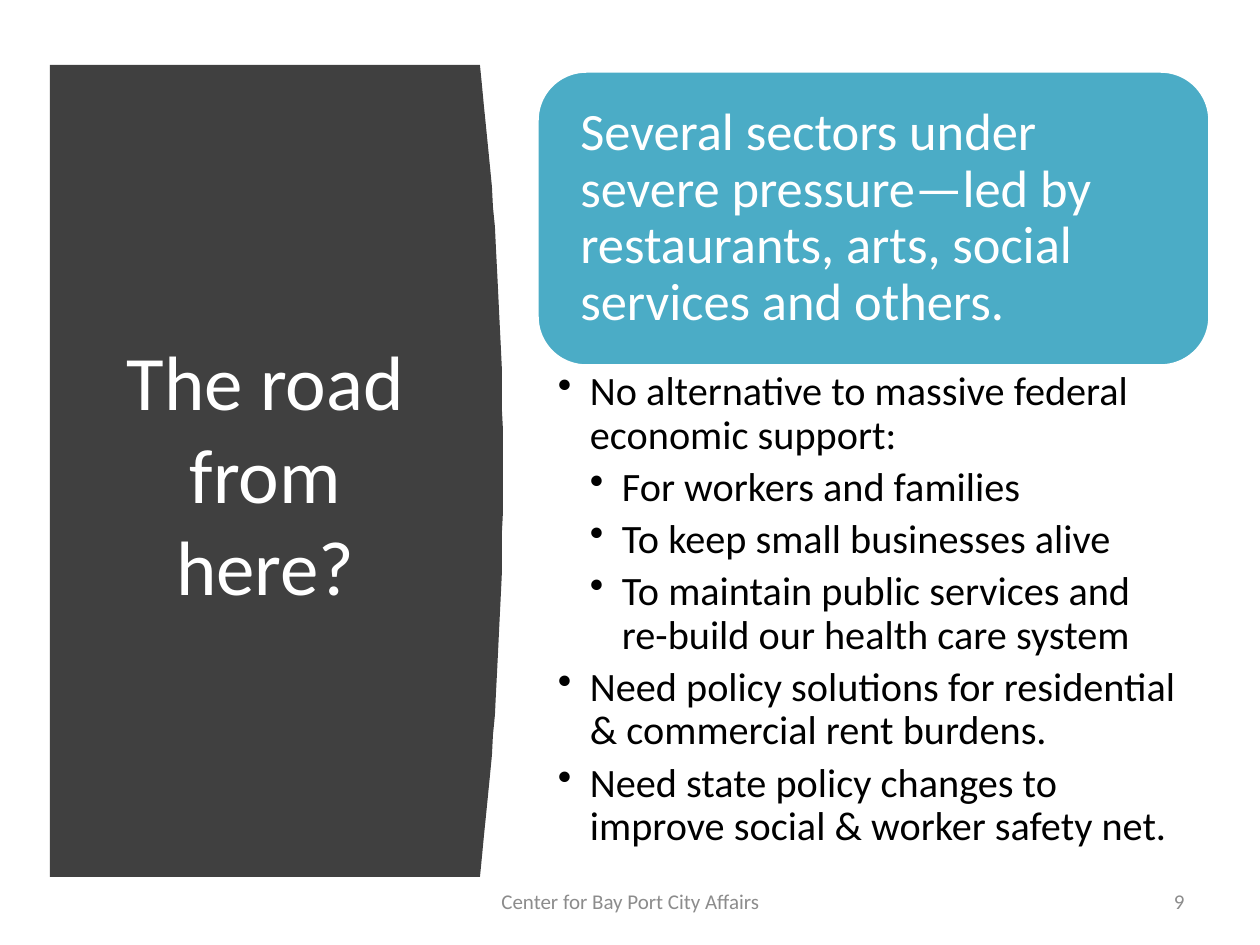
from lxml.etree import SubElement
from pptx import Presentation
from pptx.dml.color import RGBColor
from pptx.enum.shapes import MSO_SHAPE as Shape
from pptx.enum.text import MSO_ANCHOR as Anchor, PP_ALIGN as Align
from pptx.oxml.ns import qn
from pptx.util import Emu, Pt

SCALE = 914400 / 126
COLORS = {"panel": "404040", "callout": "4BACC6", "white": "FFFFFF",
          "body": "000000", "footer": "8C8C8C"}


def px(*lengths):
    return [Emu(round(length * SCALE)) for length in lengths]


def write(paragraph, text, size, color, align=Align.LEFT):
    paragraph.text = text
    paragraph.alignment = align
    paragraph.font.name = "Calibri"
    paragraph.font.size = Pt(size)
    paragraph.font.color.rgb = RGBColor.from_string(COLORS[color])


prs = Presentation()
prs.slide_width, prs.slide_height = px(1260, 945)
slide = prs.slides.add_slide(prs.slide_layouts[6])
shapes = slide.shapes

left, top, edge, bottom, bulge, steps = 50, 65, 480, 877, 23, 40
curve = []
for step in range(steps + 1):
    t = 2 * step / steps - 1
    curve.append((edge + bulge * (1 - t * t), top + (bottom - top) * step / steps))
outline = shapes.build_freeform(left, top, scale=SCALE)
outline.add_line_segments(curve + [(left, bottom)], close=True)
panel = outline.convert_to_shape()
panel.shadow.inherit = False
panel.fill.solid()
panel.fill.fore_color.rgb = RGBColor.from_string(COLORS["panel"])
panel.line.fill.background()

callout = shapes.add_shape(Shape.ROUNDED_RECTANGLE, *px(537, 71, 673, 295))
callout.shadow.inherit = False
callout.fill.solid()
callout.fill.fore_color.rgb = RGBColor.from_string(COLORS["callout"])
callout.line.color.rgb = RGBColor.from_string(COLORS["white"])
callout.line.width = Pt(2)
message = callout.text_frame
message.word_wrap = True
message.vertical_anchor = Anchor.MIDDLE
message.margin_left, message.margin_right = px(29, 29)
write(message.paragraphs[0],
      "Several sectors under severe pressure—led by restaurants, arts, "
      "social services and others.", 30, "white")
message.paragraphs[0].line_spacing = 0.9

labels = [
    ("The road from here?", (89, 140, 353, 665), 44, "white", Align.CENTER),
    ("Center for Bay Port City Affairs", (431, 876, 399, 50), 12, "footer", Align.CENTER),
    ("9", (903, 876, 294, 50), 12, "footer", Align.RIGHT),
]
for text, box, size, color, align in labels:
    label = shapes.add_textbox(*px(*box)).text_frame
    label.word_wrap = True
    label.vertical_anchor = Anchor.MIDDLE
    write(label.paragraphs[0], text, size, color, align)

needs = [
    (0, "No alternative to massive federal economic support:"),
    (1, "For workers and families"),
    (1, "To keep small businesses alive"),
    (1, "To maintain public services and re-build our health care system"),
    (0, "Need policy solutions for residential & commercial rent burdens."),
    (0, "Need state policy changes to improve social & worker safety net."),
]
agenda = shapes.add_textbox(*px(537, 366, 673, 505)).text_frame
agenda.word_wrap = True
agenda.margin_left, agenda.margin_right, agenda.margin_top, agenda.margin_bottom = px(21, 29, 5, 5)
for index, (level, text) in enumerate(needs):
    item = agenda.add_paragraph() if index else agenda.paragraphs[0]
    write(item, text, 23, "body")
    item.level = level
    item.line_spacing = 0.9
    item.space_after = Pt(5)
    indent, hanging = px(32 * (level + 1), -32)
    properties = item._p.get_or_add_pPr()
    properties.set("marL", str(indent))
    properties.set("indent", str(hanging))
    bullet = SubElement(properties, qn("a:buChar"))
    bullet.set("char", "•")
    properties.insert_element_before(bullet, "a:tabLst", "a:defRPr", "a:extLst")

prs.save("out.pptx")
